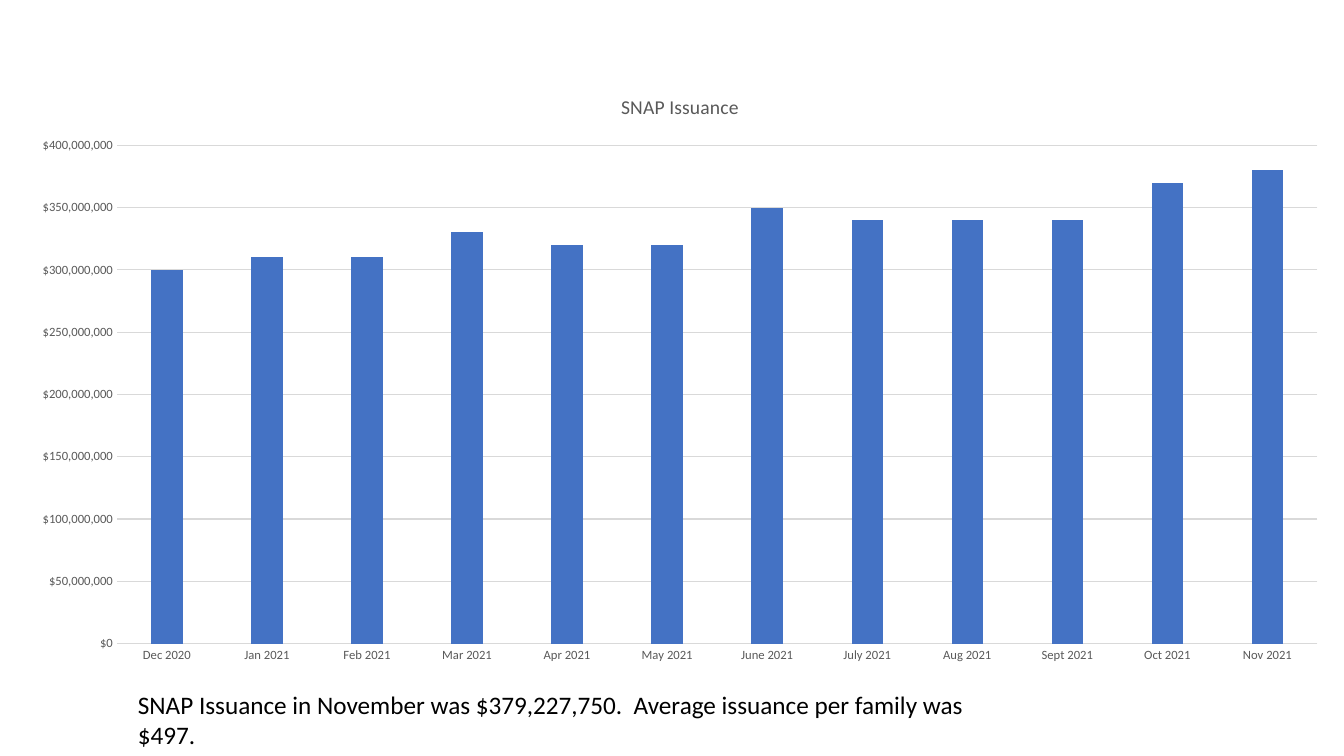
from dataclasses import dataclass

import pptx
import pptx.chart.data
import pptx.dml.color
import pptx.enum.chart
import pptx.enum.text
import pptx.util
from pptx.util import Inches


@dataclass(frozen=True)
class Theme:
    face: str = "Calibri"
    ink: str = "000000"
    gray: str = "595959"
    rule: str = "D9D9D9"
    bar: str = "4472C4"
    title: int = 14
    axis: int = 9
    note: int = 18
    line: float = 0.75


THEME = Theme()
MILLION = 1_000_000
TITLE = "SNAP Issuance"
MONTHS = ["Dec 2020", "Jan 2021", "Feb 2021", "Mar 2021", "Apr 2021", "May 2021",
          "June 2021", "July 2021", "Aug 2021", "Sept 2021", "Oct 2021", "Nov 2021"]
AMOUNTS = [300, 310, 310, 330, 320, 320, 350, 340, 340, 340, 370, 380]  # millions of dollars
NOTE = ("SNAP Issuance in November was $379,227,750.  "
        "Average issuance per family was $497.")


def color(code):
    return pptx.dml.color.RGBColor.from_string(code)


def set_font(font, size, code):
    font.name = THEME.face
    font.size = pptx.util.Pt(size)
    font.bold = False
    font.color.rgb = color(code)


def set_line(line):
    line.color.rgb = color(THEME.rule)
    line.width = pptx.util.Pt(THEME.line)


def style_axis(axis):
    none = pptx.enum.chart.XL_TICK_MARK.NONE
    axis.major_tick_mark = none
    axis.minor_tick_mark = none
    set_font(axis.tick_labels.font, THEME.axis, THEME.gray)


def add_bars(slide, left, top, width, height):
    data = pptx.chart.data.CategoryChartData(number_format='"$"#,##0')
    data.categories = MONTHS
    data.add_series(TITLE, [amount * MILLION for amount in AMOUNTS])
    kind = pptx.enum.chart.XL_CHART_TYPE.COLUMN_CLUSTERED
    chart = slide.shapes.add_chart(kind, left, top, width, height, data).chart
    set_font(chart.font, THEME.axis, THEME.gray)
    chart.has_legend = False

    chart.has_title = True
    title = chart.chart_title
    title.include_in_layout = False
    title.text_frame.text = TITLE
    set_font(title.text_frame.paragraphs[0].runs[0].font, THEME.title, THEME.gray)

    months, dollars = chart.category_axis, chart.value_axis
    style_axis(months)
    set_line(months.format.line)
    style_axis(dollars)
    dollars.format.line.fill.background()
    set_line(dollars.major_gridlines.format.line)
    dollars.minimum_scale = 0
    dollars.maximum_scale = 400 * MILLION
    dollars.major_unit = 50 * MILLION
    dollars.tick_labels.number_format = '"$"#,##0'
    dollars.tick_labels.number_format_is_linked = False

    plot = chart.plots[0]
    plot.gap_width = 219
    plot.overlap = -27
    plot.vary_by_categories = False
    fill = plot.series[0].format.fill
    fill.solid()
    fill.fore_color.rgb = color(THEME.bar)


def add_note(slide, left, top, width, height):
    frame = slide.shapes.add_textbox(left, top, width, height).text_frame
    frame.word_wrap = True
    frame.auto_size = pptx.enum.text.MSO_AUTO_SIZE.SHAPE_TO_FIT_TEXT
    frame.text = NOTE
    set_font(frame.paragraphs[0].runs[0].font, THEME.note, THEME.ink)


def main():
    deck = pptx.Presentation()
    deck.slide_width = Inches(13.33)
    deck.slide_height = Inches(7.5)
    slide = deck.slides.add_slide(deck.slide_layouts[6])
    add_bars(slide, Inches(0.16), Inches(0.72), Inches(13.17), Inches(5.97))
    add_note(slide, Inches(1.27), Inches(6.79), Inches(8.66), Inches(0.71))
    deck.save("out.pptx")


if __name__ == "__main__":
    main()
